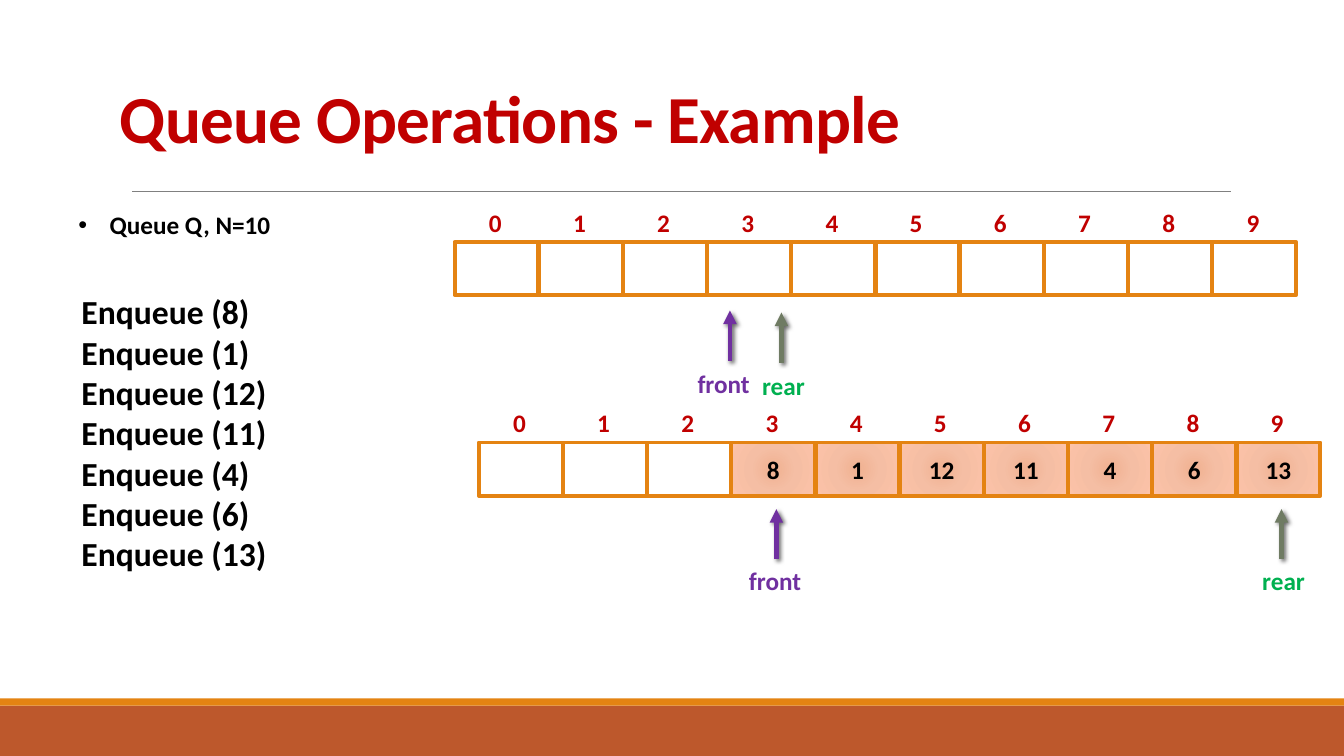
from lxml import etree
from pptx import Presentation
from pptx.dml.color import RGBColor
from pptx.enum import shapes, text
from pptx.oxml import parse_xml
from pptx.oxml.ns import nsdecls
from pptx.util import Inches, Pt

SALMON = f"""<a:gradFill {nsdecls('a')} rotWithShape="1"><a:gsLst>
<a:gs pos="0"><a:srgbClr val="F0B191"/></a:gs>
<a:gs pos="45000"><a:srgbClr val="F5BEA4"/></a:gs>
<a:gs pos="100000"><a:srgbClr val="FDC3A8"/></a:gs></a:gsLst>
<a:path path="circle"><a:fillToRect l="100000" t="100000" r="100000" b="100000"/></a:path></a:gradFill>"""
ARROW_SHADOW = f"""<a:effectLst {nsdecls('a')}><a:outerShdw blurRad="38100" dist="25400" dir="2700000">
<a:srgbClr val="000000"><a:alpha val="60000"/></a:srgbClr></a:outerShdw></a:effectLst>"""
NO_EFFECT = f"<a:effectLst {nsdecls('a')}/>"

color = RGBColor.from_string


def write(frame, wording, size, hue):
    frame.text = wording
    for paragraph in frame.paragraphs:
        for run in paragraph.runs:
            run.font.name = "Calibri"
            run.font.size = Pt(size)
            run.font.bold = True
            run.font.color.rgb = color(hue)


def add_text(parent, left, top, width, height, wording, size, hue, wrap=True):
    box = parent.add_textbox(Inches(left), Inches(top), Inches(width), Inches(height))
    box.text_frame.word_wrap = wrap
    write(box.text_frame, wording, size, hue)
    return box.text_frame


deck = Presentation()
deck.slide_width, deck.slide_height = Inches(13.33), Inches(7.5)
slide = deck.slides.add_slide(deck.slide_layouts[6])

# Footer bands
for top, height, hue in [(7, 0.5, "BD582C"), (6.93, 0.07, "E48312")]:
    band = slide.shapes.add_shape(shapes.MSO_SHAPE.RECTANGLE, 0, Inches(top),
                                  deck.slide_width, Inches(height))
    band.shadow.inherit = False
    band.fill.solid()
    band.fill.fore_color.rgb = color(hue)
    band.line.fill.background()

# Title and its rule
rule = slide.shapes.add_connector(shapes.MSO_CONNECTOR.STRAIGHT, Inches(1.31), Inches(1.9),
                                  Inches(12.21), Inches(1.9))
rule.line.color.rgb = color("808080")
rule.line.width = Pt(0.5)
rule._element.spPr.append(parse_xml(NO_EFFECT))

title = add_text(slide.shapes, 1.09, 0.02, 11, 1.59, "Queue Operations - Example", 48, "C00000")
title.vertical_anchor = text.MSO_ANCHOR.BOTTOM
title.paragraphs[0].line_spacing = 0.85
title.paragraphs[0].runs[0].font._element.set("spc", "-50")

# Queue size and list of operations
size_note = add_text(slide.shapes, 0.68, 2.03, 2.47, 0.4, "Queue Q, N=10", 18, "000000")
bullet = size_note.paragraphs[0]._p.get_or_add_pPr()
bullet.set("marL", str(Inches(0.31)))
bullet.set("indent", str(Inches(-0.31)))
bullet.append(parse_xml(f'<a:buFont {nsdecls("a")} typeface="Arial"/>'))
bullet.append(parse_xml(f'<a:buChar {nsdecls("a")} char="•"/>'))

enqueued = [8, 1, 12, 11, 4, 6, 13]
operations = "\n".join(f"Enqueue ({value})" for value in enqueued)
add_text(slide.shapes, 0.71, 2.84, 3.64, 2.93, operations, 24, "000000")

# Queue before and after: left, index top, cell top, cell values,
# then each pointer: name, arrow x, arrow tip, label left, label top, label width, colours
queues = [
    (4.51, 2.01, 2.4, [""] * 10,
     [("front", 7.24, 3.08, 6.82, 3.61, 0.76, "7030A0", "7030A0"),
      ("rear", 7.75, 3.1, 7.46, 3.62, 0.69, "6F7B63", "00B050")]),
    (4.75, 3.99, 4.39, [""] * 3 + enqueued,
     [("front", 7.7, 5.05, 7.33, 5.56, 0.76, "7030A0", "7030A0"),
      ("rear", 12.71, 5.05, 12.42, 5.56, 0.69, "6F7B63", "00B050")]),
]
CELL_PITCH = 0.835

for left, index_top, cell_top, values, pointers in queues:
    queue = slide.shapes.add_group_shape().shapes

    # Cells with their indexes
    for index, value in enumerate(values):
        cell_left = left + index * CELL_PITCH
        cell = queue.add_shape(shapes.MSO_SHAPE.RECTANGLE, Inches(cell_left), Inches(cell_top),
                               Inches(0.83), Inches(0.53))
        cell.shadow.inherit = False
        cell.fill.solid()
        cell.fill.fore_color.rgb = color("FFFFFF")
        cell.line.color.rgb = color("E48312")
        cell.line.width = Pt(2.75)
        if value:
            plain = cell._element.spPr.find("a:solidFill", {"a": etree.QName(parse_xml(NO_EFFECT)).namespace})
            cell._element.spPr.replace(plain, parse_xml(SALMON))
            write(cell.text_frame, str(value), 18, "000000")
            cell.text_frame.vertical_anchor = text.MSO_ANCHOR.MIDDLE
            cell.text_frame.paragraphs[0].alignment = text.PP_ALIGN.CENTER
        add_text(queue, cell_left + 0.24, index_top, 0.34, 0.4, str(index), 18, "C00000", wrap=False)

    # Front and rear pointers
    for name, x, tip, label_left, label_top, label_width, arrow_hue, label_hue in pointers:
        arrow = queue.add_connector(shapes.MSO_CONNECTOR.STRAIGHT, Inches(x), Inches(tip + 0.5),
                                    Inches(x), Inches(tip))
        arrow.line.color.rgb = color(arrow_hue)
        arrow.line.width = Pt(3.25)
        arrow.line._get_or_add_ln().append(parse_xml(f'<a:tailEnd {nsdecls("a")} type="triangle"/>'))
        arrow._element.spPr.append(parse_xml(ARROW_SHADOW))
        add_text(queue, label_left, label_top, label_width, 0.4, name, 18, label_hue, wrap=False)

deck.save("out.pptx")
